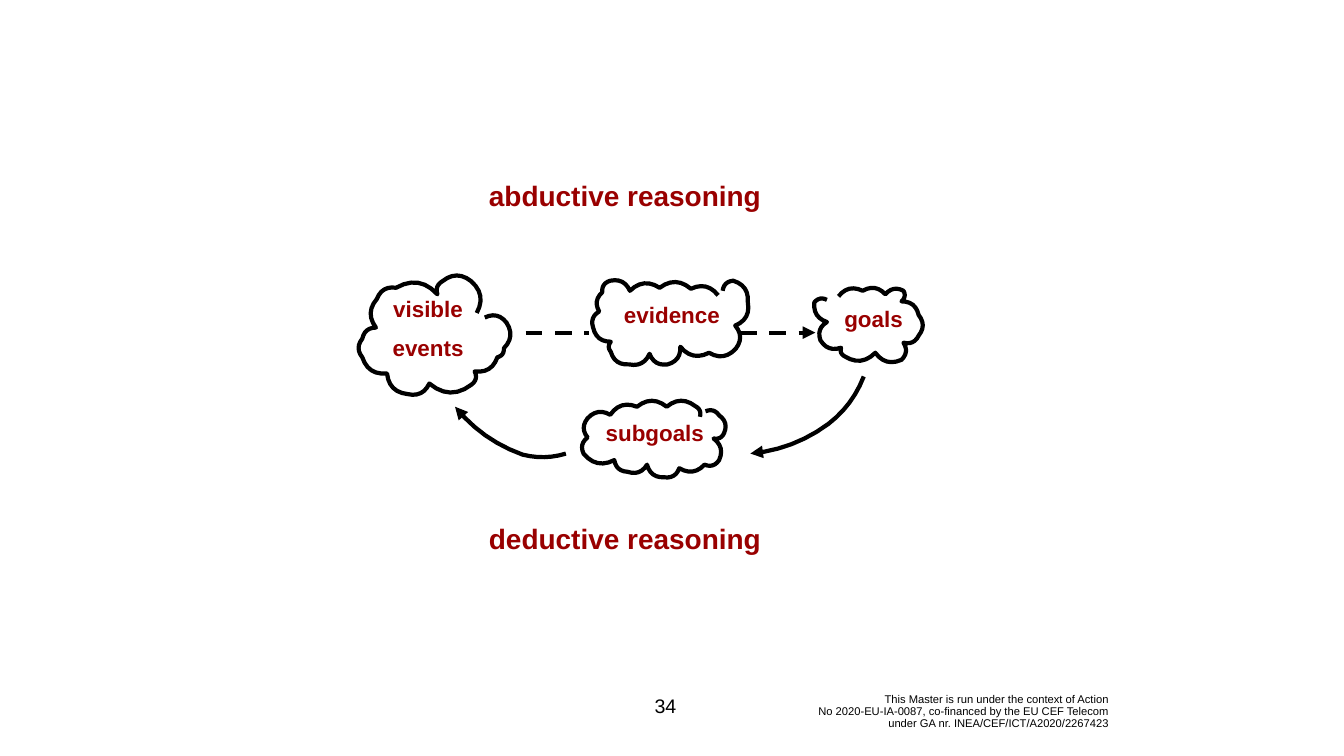
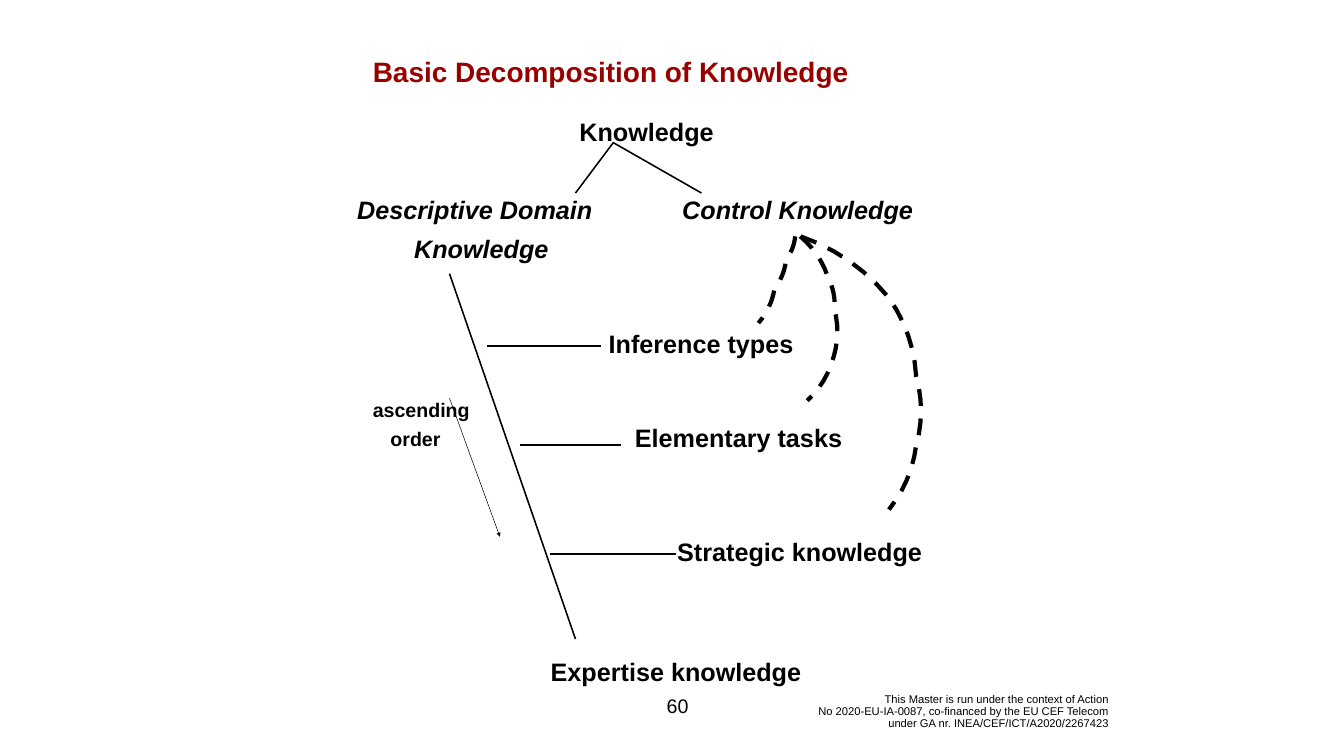
from itertools import pairwise
from pptx import Presentation
from pptx.dml.color import RGBColor as Rgb
from pptx.enum.dml import MSO_LINE as Dash
from pptx.enum.shapes import MSO_CONNECTOR as Link
from pptx.enum.text import MSO_ANCHOR as Anchor, PP_ALIGN as Align
from pptx.oxml.ns import qn
from pptx.util import Inches, Pt
from lxml.etree import SubElement

HUES = {"ink": "000000", "red": "990000"}
FONT = "Arial"
THICK, THIN, HAIR = 6, 2.25, 0.75
PUFF, BEND, STEPS = 0.2, -0.07, 6

FOOTER = (
    "This Master is run under the context of Action\v"
    "No 2020-EU-IA-0087, co-financed by the EU CEF Telecom\v"
    "under GA nr. INEA/CEF/ICT/A2020/2267423"
)

CLOUDS = [
    [
        (9.46, 6.21), (9.35, 5.58), (8.78, 5.58), (8.68, 5.84), (7.86, 5.71),
        (7.48, 5.93), (7.46, 6.5), (7.19, 6.72), (7.19, 7.09), (7.68, 7.41),
        (8.09, 7.82), (8.52, 7.61), (9.36, 7.63), (9.42, 7.37), (9.87, 7.09),
        (10, 6.91), (10.05, 6.4), (9.62, 6.3),
    ],
    [
        (14.25, 5.86), (13.71, 5.73), (13.09, 5.71), (12.5, 5.77), (12.11, 5.57),
        (11.95, 5.8), (11.89, 6.18), (11.77, 6.5), (12.12, 6.78), (12.12, 6.98),
        (12.48, 7.23), (12.89, 7.02), (13.25, 7.23), (13.5, 6.88), (14.07, 7),
        (14.6, 6.92), (14.59, 6.46), (14.84, 6), (14.55, 5.57), (14.34, 5.77),
    ],
    [
        (16.41, 5.95), (16.16, 6), (16.41, 6.39), (16.28, 6.75), (16.69, 6.9),
        (16.76, 7.07), (17.37, 7), (17.89, 7.14), (17.93, 6.8), (18.23, 6.66),
        (18.23, 6.25), (17.89, 5.98), (17.93, 5.77), (17.57, 5.84), (17.12, 5.77),
        (16.64, 5.88),
    ],
    [
        (13.89, 8.27), (13.8, 8.06), (13.23, 8.07), (12.64, 8.07), (12.11, 8.23),
        (11.66, 8.3), (11.66, 8.68), (11.58, 9), (12.19, 9.13), (12.45, 9.36),
        (12.84, 9.22), (13.18, 9.47), (13.48, 9.29), (13.98, 9.22), (14.27, 9.13),
        (14.16, 8.7), (14.37, 8.59), (14.27, 8.24), (14, 8.16),
    ],
]

ARROWS = [
    [(17.14, 7.47), (16.44, 8.41), (14.89, 9)],
    [(11.23, 9), (10.37, 9.02), (9.03, 8.07)],
]

ARCS = [
    [(15.78, 4.69), (15.6, 5.15), (15.37, 5.73), (15.05, 6.41)],
    [(15.88, 4.69), (16.43, 5.5), (16.56, 6.14), (16.54, 7.09), (16.02, 7.95)],
    [(15.89, 4.69), (17.64, 5.91), (18.18, 7.46), (18.18, 8.84), (17.64, 10.11)],
]


def text(slide, words, left, top, width, height, size=36, hue="ink", bold=True,
         italic=False, align=Align.LEFT, anchor=Anchor.TOP, gap=0, pitch=None):
    """Add a text box with one paragraph for each line of words."""
    box = slide.shapes.add_textbox(*map(Inches, (left, top, width, height)))
    frame = box.text_frame
    frame.word_wrap = True
    frame.vertical_anchor = anchor
    for i, line in enumerate(words.split("\n")):
        para = frame.paragraphs[0] if i == 0 else frame.add_paragraph()
        para.text = line
        para.alignment = align
        para.space_before = Pt(gap if i else 0)
        if pitch:
            para.line_spacing = pitch
        for run in para.runs:
            font = run.font
            font.name, font.size = FONT, Pt(size)
            font.bold, font.italic = bold, italic
            font.color.rgb = Rgb.from_string(HUES[hue])


def label(slide, words, left, mid, width, **style):
    """Add a one-line label centred on a height."""
    text(slide, words, left, mid - 0.4, width, 0.8, anchor=Anchor.MIDDLE, **style)


def stroke(shape, width, dash=False, arrow=False):
    """Style the line of a shape or connector."""
    line = shape.line
    line.width = Pt(width)
    line.color.rgb = Rgb.from_string(HUES["ink"])
    if dash:
        line.dash_style = Dash.DASH
    edge = shape._element.spPr.find(qn("a:ln"))
    SubElement(edge, qn("a:round"))
    if arrow:
        SubElement(edge, qn("a:tailEnd"), type="triangle")


def rule(slide, start, end, width=THIN, **style):
    """Add a straight line between two points."""
    link = slide.shapes.add_connector(Link.STRAIGHT, *map(Inches, start + end))
    stroke(link, width, **style)
    SubElement(link._element.spPr, qn("a:effectLst"))


def bow(points, bulge):
    """Return the points that follow the first, with each gap bowed sideways."""
    trail = []
    for (x, y), (right, low) in pairwise(points):
        dx, dy = right - x, low - y
        for i in range(1, STEPS + 1):
            t = i / STEPS
            lift = 4 * bulge * t * (1 - t)
            trail.append((Inches(x + dx * t - dy * lift),
                          Inches(y + dy * t + dx * lift)))
    return trail


def curve(slide, points, bulge=BEND, **style):
    """Add an open outline of bowed strokes through the points."""
    pen = slide.shapes.build_freeform(*map(Inches, points[0]))
    pen.add_line_segments(bow(points, bulge), close=False)
    shape = pen.convert_to_shape()
    shape.shadow.inherit = False
    shape.fill.background()
    stroke(shape, THICK, **style)


def page(deck, number, align):
    """Add a blank slide with the footer and page number."""
    slide = deck.slides.add_slide(deck.slide_layouts[6])
    text(slide, FOOTER, 15.02, 13.74, 7.08, 0.76, size=16, bold=False,
         align=Align.RIGHT, anchor=Anchor.MIDDLE, pitch=0.9)
    text(slide, number, 12.65, 13.61, 1.11, 0.8, size=28, bold=False,
         align=align, anchor=Anchor.MIDDLE)
    return slide


def cycle(deck):
    """Build the reasoning cycle slide."""
    slide = page(deck, "34", Align.CENTER)
    for cloud in CLOUDS:
        curve(slide, cloud, PUFF)
    for arrow in ARROWS:
        curve(slide, arrow, arrow=True)
    rule(slide, (10.43, 6.6), (11.68, 6.6), THICK, dash=True)
    rule(slide, (14.68, 6.6), (16.18, 6.6), THICK, dash=True, arrow=True)
    names = [
        ("visible\nevents", 6.83, 5.8, 1.45),
        ("evidence", 11.67, 5.93, 0.64),
        ("goals", 15.67, 6, 0.64),
        ("subgoals", 11.33, 8.26, 0.64),
    ]
    for name, left, top, height in names:
        text(slide, name, left, top, 3.33, height, size=32, hue="red",
             align=Align.CENTER, gap=18)
    for name, top in (("abductive reasoning", 3.5), ("deductive reasoning", 10.3)):
        text(slide, name, 6.9, top, 11, 0.77, size=40, hue="red",
             align=Align.CENTER)


def tree(deck):
    """Build the knowledge decomposition slide."""
    slide = page(deck, "60", Align.RIGHT)
    rule(slide, (8.92, 5.43), (11.42, 12.68))
    for left, right, y in ((9.67, 11.92, 6.86), (10.32, 12.32, 8.83),
                           (10.92, 13.42, 10.99)):
        rule(slide, (left, y), (right, y))
    for arc in ARCS:
        curve(slide, arc, dash=True)
    for x in (11.42, 13.92):
        rule(slide, (12.17, 2.83), (x, 3.83))
    rule(slide, (8.92, 7.9), (9.92, 10.65), HAIR, arrow=True)
    label(slide, "Basic Decomposition of Knowledge", 7.3, 1.41, 10, size=40, hue="red")
    for words, left, mid, width in (
        ("Knowledge", 11.4, 2.6, 3.2),
        ("Inference types", 11.98, 6.81, 4.2),
        ("Elementary tasks", 12.5, 8.67, 4.6),
        ("Strategic knowledge", 13.34, 10.95, 5.4),
        ("Expertise knowledge", 10.83, 13.33, 5.6),
    ):
        label(slide, words, left, mid, width)
    for words, left, mid, width in (
        ("Descriptive Domain", 6.99, 4.15, 5.2),
        ("Control Knowledge", 13.44, 4.15, 5.2),
        ("Knowledge", 8.12, 4.92, 3.2),
    ):
        label(slide, words, left, mid, width, italic=True)
    label(slide, "ascending", 7.3, 8.13, 2.4, size=28)
    label(slide, "order", 7.65, 8.71, 1.6, size=28)


def main():
    """Build and save the deck."""
    deck = Presentation()
    deck.slide_width, deck.slide_height = Inches(26.67), Inches(15)
    cycle(deck)
    tree(deck)
    deck.save("out.pptx")


if __name__ == "__main__":
    main()
